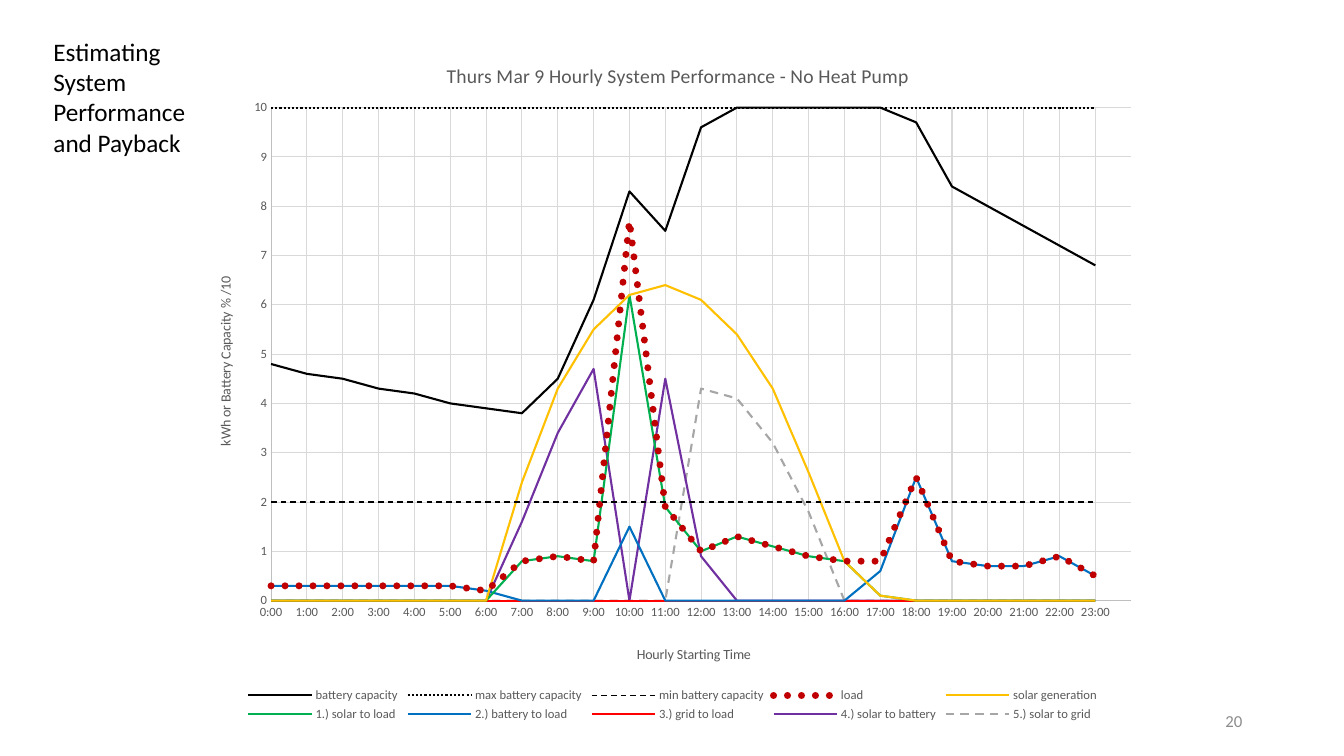
"""Build the slide on hourly system performance without a heat pump."""
from lxml.etree import SubElement
from pptx import Presentation
from pptx.chart.data import XyChartData
from pptx.dml.color import RGBColor
from pptx.enum.chart import XL_CHART_TYPE, XL_LEGEND_POSITION, XL_TICK_MARK
from pptx.enum.dml import MSO_LINE
from pptx.enum.text import MSO_ANCHOR, MSO_AUTO_SIZE, PP_ALIGN
from pptx.oxml.ns import qn
from pptx.util import Inches, Pt


def style(font, size, color):
    font.name = "Calibri"
    font.size = Pt(size)
    font.bold = False
    font.color.rgb = RGBColor.from_string(color)


def place(part, **spots):
    layout = part.find(qn("c:layout"))
    if layout is None:
        layout = SubElement(part, qn("c:layout"))
        after = part.find(qn("c:overlay"))
        if after is None:
            part.insert(0, layout)
        else:
            after.addprevious(layout)
    manual = SubElement(layout, qn("c:manualLayout"))
    for name, value in spots.items():
        SubElement(manual, qn("c:" + name)).set("val", str(value))


GREY = "595959"
HOURS = 24
ROWS = [
    ("battery capacity", "000000", 1.5, None,
     [4.8, 4.6, 4.5, 4.3, 4.2, 4, 3.9, 3.8, 4.5, 6.1, 8.3, 7.5,
      9.6, 10, 10, 10, 10, 10, 9.7, 8.4, 8, 7.6, 7.2, 6.8]),
    ("max battery capacity", "000000", 1.5, MSO_LINE.ROUND_DOT, [10] * HOURS),
    ("min battery capacity", "000000", 1, MSO_LINE.DASH, [2] * HOURS),
    ("load", "C00000", 5, MSO_LINE.ROUND_DOT,
     [0.3] * 6 + [0.2, 0.8, 0.9, 0.8, 7.7, 1.9, 1, 1.3, 1.1, 0.9, 0.8, 0.8,
                  2.5, 0.8, 0.7, 0.7, 0.9, 0.5]),
    ("solar generation", "FFC000", 1.5, None,
     [0] * 7 + [2.4, 4.3, 5.5, 6.2, 6.4, 6.1, 5.4, 4.3, 2.6, 0.8, 0.1]
     + [0] * 6),
    ("1.) solar to load", "00B050", 1.5, None,
     [0] * 7 + [0.8, 0.9, 0.8, 6.2, 1.9, 1, 1.3, 1.1, 0.9, 0.8, 0.1]
     + [0] * 6),
    ("2.) battery to load", "0070C0", 1.5, None,
     [0.3] * 6 + [0.2, 0, 0, 0, 1.5] + [0] * 6
     + [0.6, 2.5, 0.8, 0.7, 0.7, 0.9, 0.5]),
    ("3.) grid to load", "FF0000", 1.5, None, [0] * HOURS),
    ("4.) solar to battery", "7030A0", 1.5, None,
     [0] * 7 + [1.6, 3.4, 4.7, 0, 4.5, 0.9] + [0] * 11),
    ("5.) solar to grid", "A6A6A6", 1.5, MSO_LINE.DASH,
     [0] * 12 + [4.3, 4.1, 3.2, 1.8] + [0] * 8),
]

deck = Presentation()
deck.slide_width = Inches(13.33)
deck.slide_height = Inches(7.5)
slide = deck.slides.add_slide(deck.slide_layouts[5])

title = slide.shapes.title
title.left, title.top = Inches(0.43), Inches(0.31)
title.width, title.height = Inches(1.65), Inches(1.31)
frame = title.text_frame
frame.text = "Estimating System Performance and Payback"
frame.word_wrap = True
frame.auto_size = MSO_AUTO_SIZE.SHAPE_TO_FIT_TEXT
frame.vertical_anchor = MSO_ANCHOR.TOP
frame.paragraphs[0].alignment = PP_ALIGN.LEFT
style(frame.paragraphs[0].runs[0].font, 18, "000000")

data = XyChartData()
for name, color, width, dash, values in ROWS:
    row = data.add_series(name)
    for hour, value in enumerate(values):
        row.add_data_point(hour / HOURS, value)
chart = slide.shapes.add_chart(
    XL_CHART_TYPE.XY_SCATTER_LINES_NO_MARKERS, Inches(1.93), Inches(0.31),
    Inches(9.48), Inches(6.89), data).chart
style(chart.font, 10, "000000")
plot = chart.plots[0]
plot.vary_by_categories = False
for line, (name, color, width, dash, values) in zip(plot.series, ROWS):
    line.smooth = False
    pen = line.format.line
    pen.color.rgb = RGBColor.from_string(color)
    pen.width = Pt(width)
    if dash:
        pen.dash_style = dash
    if name == "load":
        line.format.line._ln.set("cap", "rnd")

time, power = chart.category_axis, chart.value_axis
for axis, top, step, code in [
        (time, 1, 0.04167, "h:mm"), (power, 10, 1, "#,##0")]:
    axis.minimum_scale, axis.maximum_scale = 0, top
    axis.major_unit = step
    axis.major_tick_mark = axis.minor_tick_mark = XL_TICK_MARK.NONE
    axis.tick_labels.number_format = code
    axis.tick_labels.number_format_is_linked = False
    style(axis.tick_labels.font, 9, GREY)
    axis.has_major_gridlines = True
    for pen, color in [(axis.format.line, "BFBFBF"),
                       (axis.major_gridlines.format.line, "D9D9D9")]:
        pen.color.rgb = RGBColor.from_string(color)
        pen.width = Pt(0.75)

for head, text, size, x, y in [
        (chart.chart_title, "Thurs Mar 9 Hourly System Performance - No Heat Pump",
         14, 0.26, 0.04),
        (time.axis_title, "Hourly Starting Time", 10, 0.46, 0.88),
        (power.axis_title, "kWh or Battery Capacity % /10", 10, 0.02, 0.35)]:
    head.text_frame.text = text
    style(head.text_frame.paragraphs[0].runs[0].font, size, GREY)
    place(head._element, xMode="edge", yMode="edge", x=x, y=y)

chart.has_legend = True
legend = chart.legend
legend.position = XL_LEGEND_POSITION.BOTTOM
legend.include_in_layout = False
style(legend.font, 9, GREY)
place(legend._element, xMode="edge", yMode="edge", x=0.05, y=0.94, w=0.9, h=0.06)
place(chart._chartSpace.chart.plotArea, layoutTarget="inner", xMode="edge",
      yMode="edge", x=0.08, y=0.11, w=0.9, h=0.71)

page = slide.shapes.add_textbox(Inches(9.42), Inches(6.95), Inches(3), Inches(0.4))
frame = page.text_frame
frame.text = "20"
frame.word_wrap = True
frame.vertical_anchor = MSO_ANCHOR.MIDDLE
frame.paragraphs[0].alignment = PP_ALIGN.RIGHT
style(frame.paragraphs[0].runs[0].font, 12, "8C8C8C")

deck.save("out.pptx")
